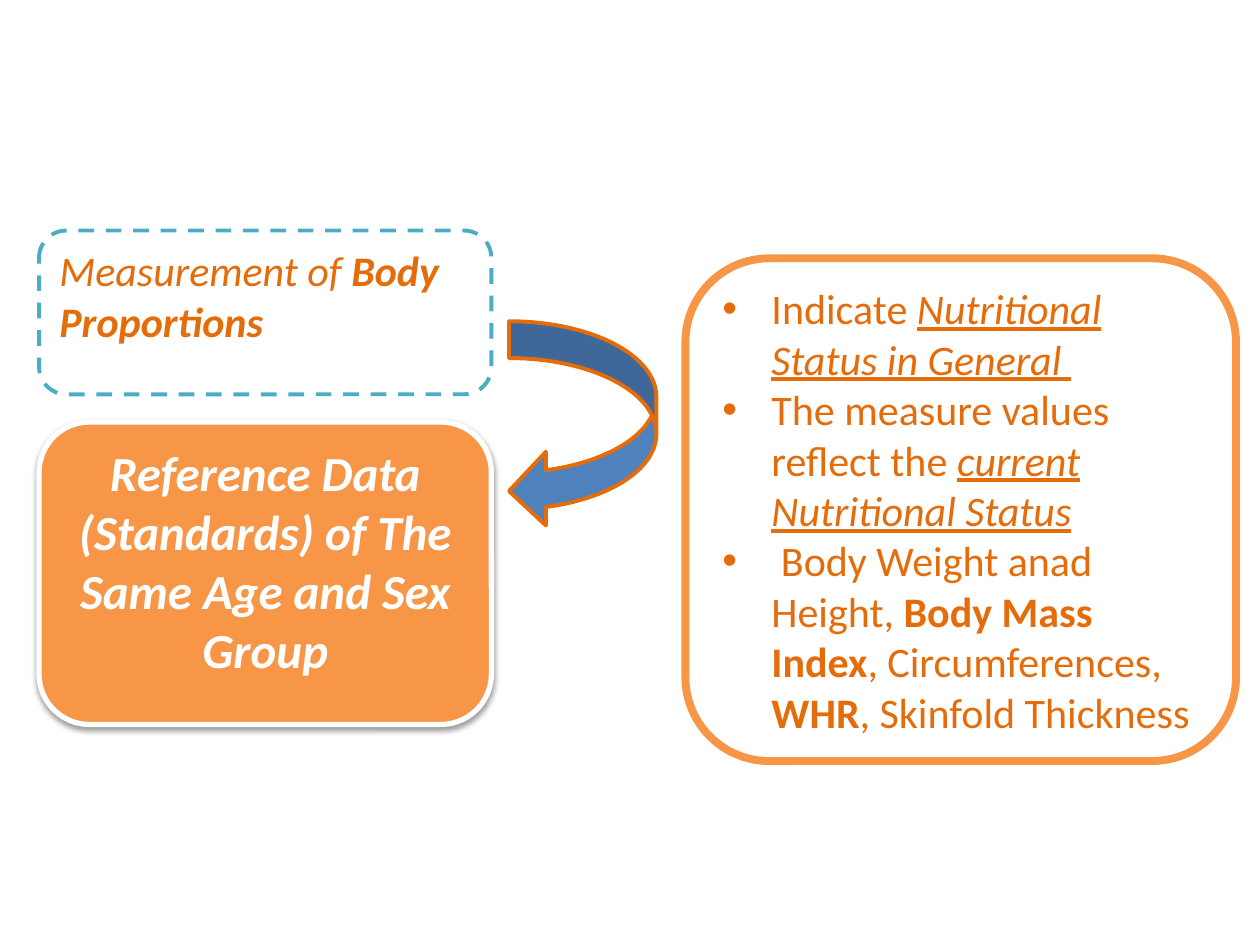
"""Build a slide on body proportion measurements, reference data and nutritional status."""
from lxml import etree
from pptx import Presentation
from pptx import util as u
from pptx.dml.color import RGBColor
from pptx.enum import dml, shapes, text
from pptx.oxml import ns

WHITE = RGBColor(0xFF, 0xFF, 0xFF)
ORANGE = RGBColor(0xF7, 0x96, 0x46)
DARK_ORANGE = RGBColor(0xE4, 0x6C, 0x0A)
TEAL = RGBColor(0x4B, 0xAC, 0xC6)
BLUE = RGBColor(0x4F, 0x81, 0xBD)
ROUNDED = shapes.MSO_SHAPE.ROUNDED_RECTANGLE


def add_shape(s, kind, box, fill, line, width):
    sp = s.shapes.add_shape(kind, *(u.Inches(v) for v in box))
    sp.shadow.inherit = False
    sp.fill.solid()
    sp.fill.fore_color.rgb = fill
    sp.line.color.rgb = line
    sp.line.width = u.Pt(width)
    sp.text_frame.word_wrap = True
    sp.text_frame.vertical_anchor = text.MSO_ANCHOR.TOP
    return sp


def add_runs(p, runs, size, color, align=text.PP_ALIGN.LEFT):
    p.alignment = align
    for words, style in runs:
        r = p.add_run()
        r.text = words
        r.font.name = "Calibri"
        r.font.size = u.Pt(size)
        r.font.color.rgb = color
        r.font.bold = "b" in style
        r.font.italic = "i" in style
        r.font.underline = "u" in style


prs = Presentation()
prs.slide_width, prs.slide_height = u.Inches(10), u.Inches(7.5)
s = prs.slides.add_slide(prs.slide_layouts[6])

measurement = add_shape(s, ROUNDED, (0.31, 1.83, 3.59, 1.3), WHITE, TEAL, 2.25)
measurement.line.dash_style = dml.MSO_LINE.DASH
add_runs(measurement.text_frame.paragraphs[0],
         [("Measurement of ", "i"), ("Body Proportions", "bi")], 24, DARK_ORANGE)

reference = add_shape(s, ROUNDED, (0.31, 3.35, 3.59, 2.4), ORANGE, WHITE, 3)
add_runs(reference.text_frame.paragraphs[0],
         [("Reference Data (Standards) of The Same Age and Sex Group", "bi")],
         28, WHITE, text.PP_ALIGN.CENTER)
effects = reference._element.spPr.find(ns.qn("a:effectLst"))
shadow = etree.SubElement(effects, ns.qn("a:outerShdw"), blurRad="40000", dist="20000",
                          dir="5400000", rotWithShape="0")
shadow_color = etree.SubElement(shadow, ns.qn("a:srgbClr"), val="000000")
etree.SubElement(shadow_color, ns.qn("a:alpha"), val="38000")

add_shape(s, shapes.MSO_SHAPE.CURVED_LEFT_ARROW, (4.04, 2.55, 1.17, 1.64),
          BLUE, DARK_ORANGE, 2.25)

findings = add_shape(s, ROUNDED, (5.44, 2.05, 4.37, 3.99), WHITE, ORANGE, 4.5)
tf = findings.text_frame
tf.vertical_anchor = text.MSO_ANCHOR.MIDDLE
bullets = [
    [("Indicate ", ""), ("Nutritional Status in General ", "iu")],
    [("The measure values reflect the ", ""), ("current Nutritional Status", "iu")],
    [(" Body Weight anad Height, ", ""), ("Body Mass Index", "b"),
     (", Circumferences, ", ""), ("WHR", "b"), (", Skinfold Thickness", "")],
]
for i, runs in enumerate(bullets):
    p = tf.add_paragraph() if i else tf.paragraphs[0]
    pPr = p._p.get_or_add_pPr()
    pPr.set("marL", str(u.Inches(0.39)))
    pPr.set("indent", str(u.Inches(-0.39)))
    etree.SubElement(pPr, ns.qn("a:buFont"), typeface="Arial")
    etree.SubElement(pPr, ns.qn("a:buChar"), char="•")
    add_runs(p, runs, 24, DARK_ORANGE)

prs.save("out.pptx")
